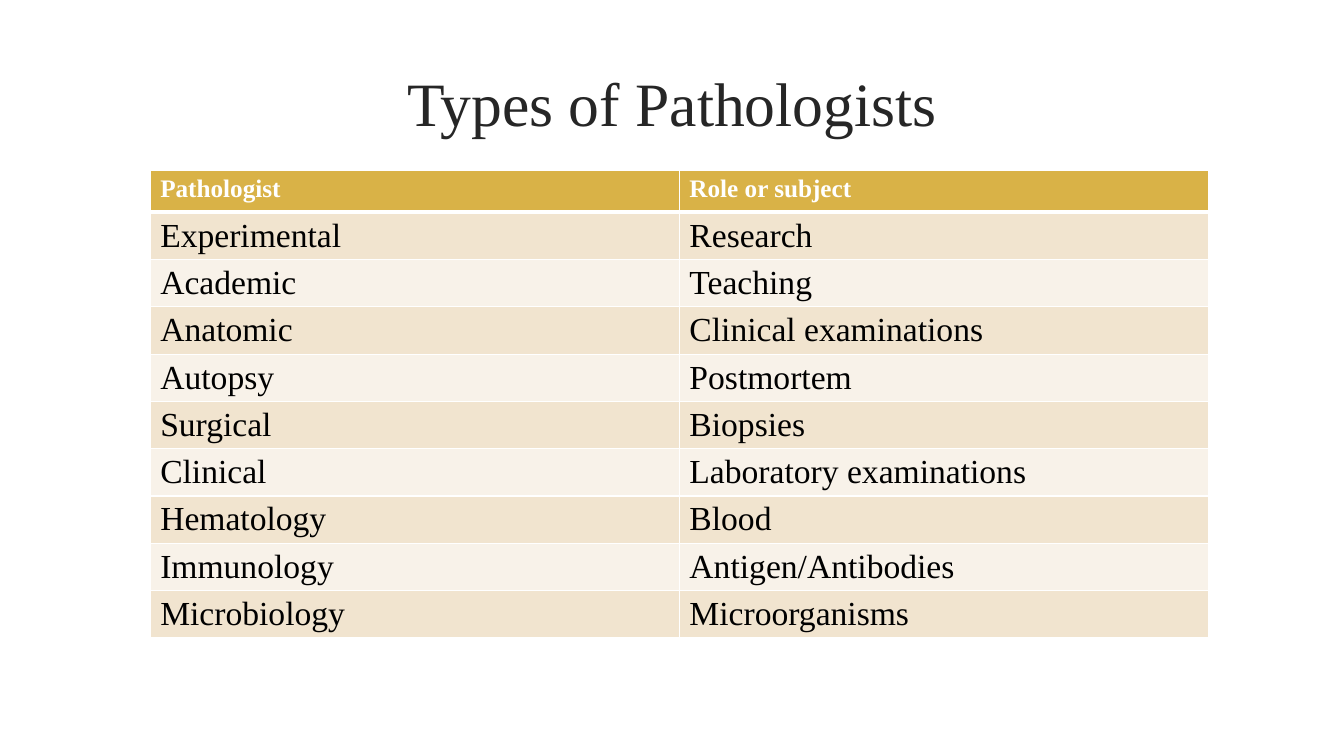
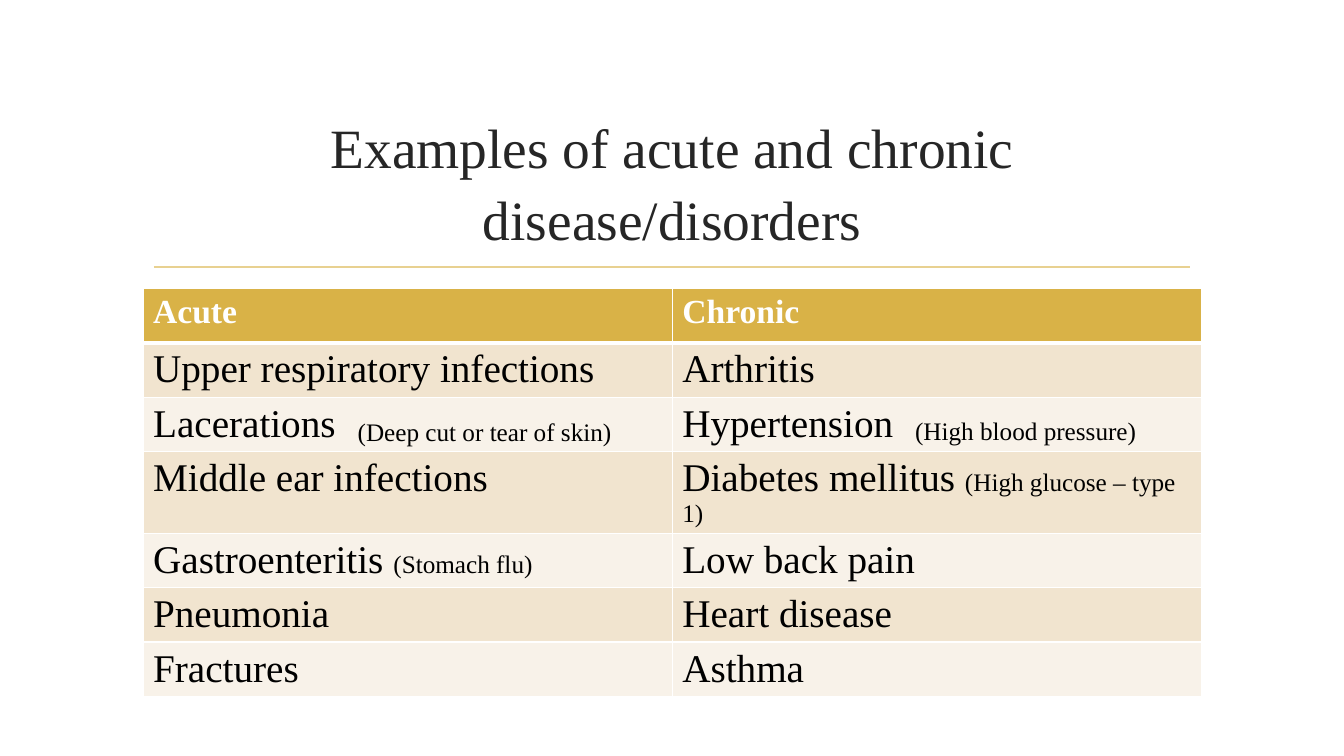
"""Build two slides on pathologists and on acute and chronic disease, each with a table."""
from dataclasses import dataclass

from lxml import etree
from pptx import Presentation
from pptx.dml.color import RGBColor
from pptx.enum.shapes import MSO_CONNECTOR
from pptx.enum.text import MSO_ANCHOR, MSO_AUTO_SIZE, PP_ALIGN
from pptx.oxml.ns import qn
from pptx.util import Pt

STRAIGHT = MSO_CONNECTOR.STRAIGHT
MIDDLE = MSO_ANCHOR.MIDDLE
FIXED = MSO_AUTO_SIZE.NONE
CENTER = PP_ALIGN.CENTER


@dataclass(frozen=True)
class Theme:
    font: str = "Times New Roman"
    title: str = "262626"
    rule: str = "E8D191"
    head: str = "D9B247"
    bands: tuple = ("F8F2E9", "F1E4CF")
    white: str = "FFFFFF"
    black: str = "000000"
    note: float = 18
    wide: float = 756
    leading: float = 1.08


THEME = Theme()


def add_run(para, text, size, color, bold=False):
    run = para.add_run()
    run.text = text
    font = run.font
    font.name, font.size, font.bold = THEME.font, Pt(size), bold
    font.color.rgb = RGBColor.from_string(color)


def add_edge(cell, side, width):
    props = cell._tc.get_or_add_tcPr()
    edge = etree.SubElement(props, qn(f"a:ln{side}"), w=str(Pt(width)))
    fill = etree.SubElement(edge, qn("a:solidFill"))
    etree.SubElement(fill, qn("a:srgbClr"), val=THEME.white)


SLIDES = [
    {
        "title": "Types of Pathologists", "size": 44, "top": 19.4,
        "place": (107.3, 121.7), "heights": (30, 33.7), "sizes": (18, 24),
        "rows": [
            ("Pathologist", "Role or subject"),
            ("Experimental", "Research"),
            ("Academic", "Teaching"),
            ("Anatomic", "Clinical examinations"),
            ("Autopsy", "Postmortem"),
            ("Surgical", "Biopsies"),
            ("Clinical", "Laboratory examinations"),
            ("Hematology", "Blood"),
            ("Immunology", "Antigen/Antibodies"),
            ("Microbiology", "Microorganisms"),
        ],
        "notes": [],
    },
    {
        "title": "Examples of acute and chronic disease/disorders",
        "size": 39.6, "top": 77,
        "place": (102.2, 206), "heights": (38.9, 38.9), "sizes": (24, 28),
        "rows": [
            ("Acute", "Chronic"),
            ("Upper respiratory infections", "Arthritis"),
            ("Lacerations", "Hypertension"),
            ("Middle ear infections",
             ("Diabetes mellitus ", "(High glucose – type 1)")),
            (("Gastroenteritis ", "(Stomach flu)"), "Low back pain"),
            ("Pneumonia", "Heart disease"),
            ("Fractures", "Asthma"),
        ],
        "notes": [
            ("(Deep cut or tear of skin)", 248.4, 293.8, 201),
            ("(High blood pressure)", 646.6, 293, 211.7),
        ],
    },
]

deck = Presentation()
deck.slide_width, deck.slide_height = Pt(960), Pt(540)
layout = deck.slide_layouts[5]

for page in SLIDES:
    slide = deck.slides.add_slide(layout)
    shapes = slide.shapes

    rule = shapes.add_connector(STRAIGHT, Pt(110), Pt(190.8), Pt(850.3), Pt(190.8))
    rule.line.color.rgb = RGBColor.from_string(THEME.rule)
    rule.line.width = Pt(1.25)
    etree.SubElement(rule.element.spPr, qn("a:effectLst"))

    title = shapes.title
    title.left, title.top = Pt(102.2), Pt(page["top"])
    title.width, title.height = Pt(THEME.wide), Pt(103)
    frame = title.text_frame
    frame.word_wrap, frame.auto_size = True, FIXED
    frame.vertical_anchor = MIDDLE
    para = frame.paragraphs[0]
    para.alignment, para.line_spacing = CENTER, THEME.leading
    add_run(para, page["title"], page["size"], THEME.title)

    rows = page["rows"]
    left, top = page["place"]
    first, rest = page["heights"]
    table = shapes.add_table(
        len(rows), 2, Pt(left), Pt(top), Pt(THEME.wide),
        Pt(first + rest * (len(rows) - 1))).table
    for col in table.columns:
        col.width = Pt(THEME.wide / 2)
    for i, row in enumerate(rows):
        head = i == 0
        table.rows[i].height = Pt(first if head else rest)
        shade = THEME.head if head else THEME.bands[i % 2]
        color = THEME.white if head else THEME.black
        size = page["sizes"][0 if head else 1]
        for j, text in enumerate(row):
            cell = table.cell(i, j)
            for side in "LRTB":
                thick = (i, side) in ((0, "B"), (1, "T"))
                add_edge(cell, side, 3 if thick else 1)
            cell.fill.solid()
            cell.fill.fore_color.rgb = RGBColor.from_string(shade)
            parts = (text,) if isinstance(text, str) else text
            para = cell.text_frame.paragraphs[0]
            for part, points in zip(parts, (size, THEME.note)):
                add_run(para, part, points, color, head)

    for text, left, top, width in page["notes"]:
        box = shapes.add_textbox(Pt(left), Pt(top), Pt(width), Pt(29))
        box.text_frame.word_wrap = True
        add_run(box.text_frame.paragraphs[0], text, THEME.note, THEME.black)

deck.save("out.pptx")
